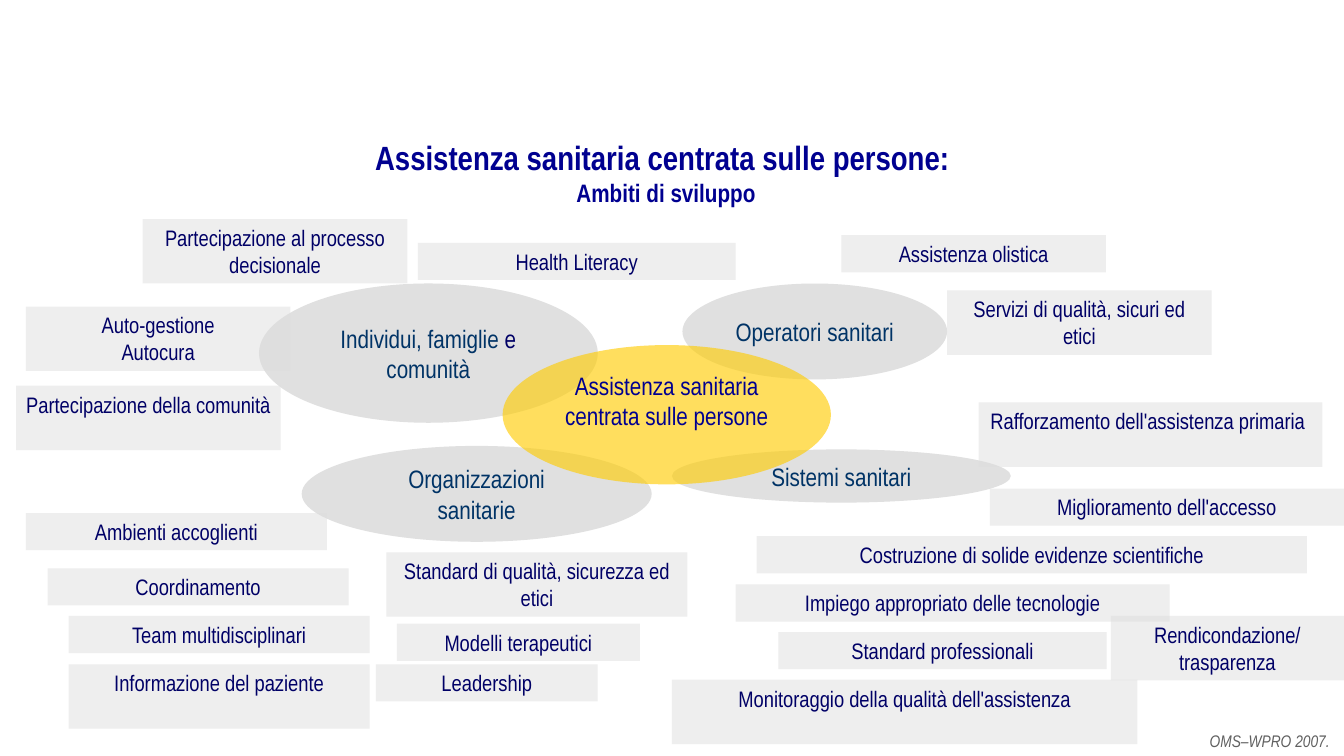
"""Build a slide on the development areas of people-centred health care."""
from dataclasses import dataclass

from lxml.etree import SubElement
from pptx import Presentation
from pptx.dml.color import RGBColor
from pptx.enum.shapes import MSO_SHAPE
from pptx.enum.text import MSO_ANCHOR, MSO_AUTO_SIZE, PP_ALIGN
from pptx.oxml.ns import qn
from pptx.util import Pt

FONT = "Arial Narrow"
NAVY, TEAL, INDIGO, GREY = "000090", "003366", "000066", "606060"
ONE_LINE, TWO_LINES = 26.5, 46


@dataclass(frozen=True)
class Run:
    """A stretch of text in one colour and size."""
    text: str
    colour: str
    size: float
    bold: bool = False
    italic: bool = False


@dataclass(frozen=True)
class Domain:
    """An ellipse naming a domain; each paragraph is a list of runs."""
    left: float
    top: float
    width: float
    height: float
    paragraphs: list[list[Run]]
    fill: str = "C0C0C0"
    opacity: int = 49
    anchor: MSO_ANCHOR = MSO_ANCHOR.MIDDLE


@dataclass(frozen=True)
class Topic:
    """A pale box naming an area of development."""
    left: float
    top: float
    width: float
    height: float
    text: str


DOMAINS = [
    Domain(487.5, 202.5, 189, 68.5, [[Run("Operatori sanitari", TEAL, 18)]]),
    Domain(185, 202.5, 242, 99.5, [[Run("Individui, famiglie ", TEAL, 18), Run("e", INDIGO, 18),
                                    Run(" comunità", TEAL, 18)]]),
    Domain(215.5, 318.5, 250, 68.5, [[Run("Organizzazioni", TEAL, 18)], [Run("sanitarie", TEAL, 18)]]),
    Domain(480, 321, 242, 38, [[Run("Sistemi sanitari", TEAL, 18)]]),
    Domain(359, 246.5, 234.5, 99.5, [[Run("Assistenza sanitaria centrata sulle persone", NAVY, 18)]],
           "FFCC00", 63, MSO_ANCHOR.TOP),
]
TOPICS = [
    Topic(298.5, 173.5, 227, ONE_LINE, "Health Literacy"),
    Topic(102, 156.5, 189, TWO_LINES, "Partecipazione al processo decisionale"),
    Topic(18.5, 219, 189, TWO_LINES, "Auto-gestione\nAutocura"),
    Topic(11.5, 275.5, 189, TWO_LINES, "Partecipazione della comunità"),
    Topic(601, 168, 189, ONE_LINE, "Assistenza olistica"),
    Topic(676.5, 207.5, 189, TWO_LINES, "Servizi di qualità, sicuri ed etici"),
    Topic(18.5, 366.5, 215, ONE_LINE, "Ambienti accoglienti"),
    Topic(34, 406, 215, ONE_LINE, "Coordinamento"),
    Topic(49, 440, 215, ONE_LINE, "Team multidisciplinari"),
    Topic(49, 474.5, 215, TWO_LINES, "Informazione del paziente"),
    Topic(276, 394.5, 215, TWO_LINES, "Standard di qualità, sicurezza ed etici"),
    Topic(283.5, 445.5, 173.5, ONE_LINE, "Modelli terapeutici"),
    Topic(268.5, 474.5, 158.5, ONE_LINE, "Leadership"),
    Topic(699, 287.5, 245.5, TWO_LINES, "Rafforzamento dell'assistenza primaria "),
    Topic(707, 349, 253, ONE_LINE, "Miglioramento dell'accesso"),
    Topic(540.5, 383, 393, ONE_LINE, "Costruzione di solide evidenze scientifiche"),
    Topic(525.5, 417.5, 310, ONE_LINE, "Impiego appropriato delle tecnologie"),
    Topic(480, 485.5, 332.5, TWO_LINES, "Monitoraggio della qualità dell'assistenza"),
    Topic(793.5, 440, 166.5, TWO_LINES, "Rendicondazione/\ntrasparenza"),
    Topic(556, 451.5, 234.5, ONE_LINE, "Standard professionali"),
]


def colour(value: str) -> RGBColor:
    """Turn a hex string into a colour."""
    return RGBColor.from_string(value)


def write(text_frame, paragraphs: list[list[Run]], alignment=PP_ALIGN.CENTER,
          anchor: MSO_ANCHOR = MSO_ANCHOR.TOP) -> None:
    """Fill a text frame with formatted paragraphs."""
    frame_format = {"word_wrap": True, "auto_size": MSO_AUTO_SIZE.NONE, "vertical_anchor": anchor,
                    "margin_left": Pt(7.2), "margin_right": Pt(7.2),
                    "margin_top": Pt(3.6), "margin_bottom": Pt(3.6)}
    for name, value in frame_format.items():
        setattr(text_frame, name, value)
    for index, runs in enumerate(paragraphs):
        paragraph = text_frame.add_paragraph() if index else text_frame.paragraphs[0]
        paragraph.alignment = alignment
        for item in runs:
            run = paragraph.add_run()
            run.text = item.text
            font_format = {"name": FONT, "size": Pt(item.size), "bold": item.bold, "italic": item.italic}
            for name, value in font_format.items():
                setattr(run.font, name, value)
            run.font.color.rgb = colour(item.colour)


def add_filled_shape(slide, kind: MSO_SHAPE, box: Domain | Topic, fill: str, opacity: int):
    """Add a translucent shape without outline or shadow."""
    shape = slide.shapes.add_shape(kind, Pt(box.left), Pt(box.top), Pt(box.width), Pt(box.height))
    shape.shadow.inherit = False
    shape.line.fill.background()
    shape.fill.solid()
    shape.fill.fore_color.rgb = colour(fill)
    fill_element = shape.element.spPr.find(qn("a:solidFill"))
    SubElement(fill_element[0], qn("a:alpha"), val=str(opacity * 1000))
    return shape


def add_title(slide) -> None:
    """Place the title and its subtitle line."""
    title = slide.shapes.title
    for name, value in {"left": 64, "top": 94.5, "width": 823.5, "height": 57.5}.items():
        setattr(title, name, Pt(value))
    write(title.text_frame, [[Run("Assistenza sanitaria centrata sulle persone: ", NAVY, 24, bold=True)],
                             [Run("Ambiti di sviluppo", NAVY, 18, bold=True)]])


def add_source(slide) -> None:
    """Place the source at the lower right."""
    source = slide.shapes.add_textbox(Pt(18.5), Pt(518.5), Pt(938.5), Pt(21.5))
    write(source.text_frame, [[Run("OMS–WPRO 2007.", GREY, 12, italic=True)]], PP_ALIGN.RIGHT)


def add_domain(slide, domain: Domain) -> None:
    """Draw a domain ellipse."""
    shape = add_filled_shape(slide, MSO_SHAPE.OVAL, domain, domain.fill, domain.opacity)
    write(shape.text_frame, domain.paragraphs, anchor=domain.anchor)


def add_topic(slide, topic: Topic) -> None:
    """Draw a topic box."""
    shape = add_filled_shape(slide, MSO_SHAPE.RECTANGLE, topic, "DDDDDD", 49)
    write(shape.text_frame, [[Run(line, INDIGO, 16)] for line in topic.text.split("\n")])


def main() -> None:
    """Build and save the presentation."""
    presentation = Presentation()
    presentation.slide_width, presentation.slide_height = Pt(960), Pt(540)
    slide = presentation.slides.add_slide(presentation.slide_layouts[5])
    add_title(slide)
    add_source(slide)
    for domain in DOMAINS:
        add_domain(slide, domain)
    for topic in TOPICS:
        add_topic(slide, topic)
    presentation.save("out.pptx")


if __name__ == "__main__":
    main()
